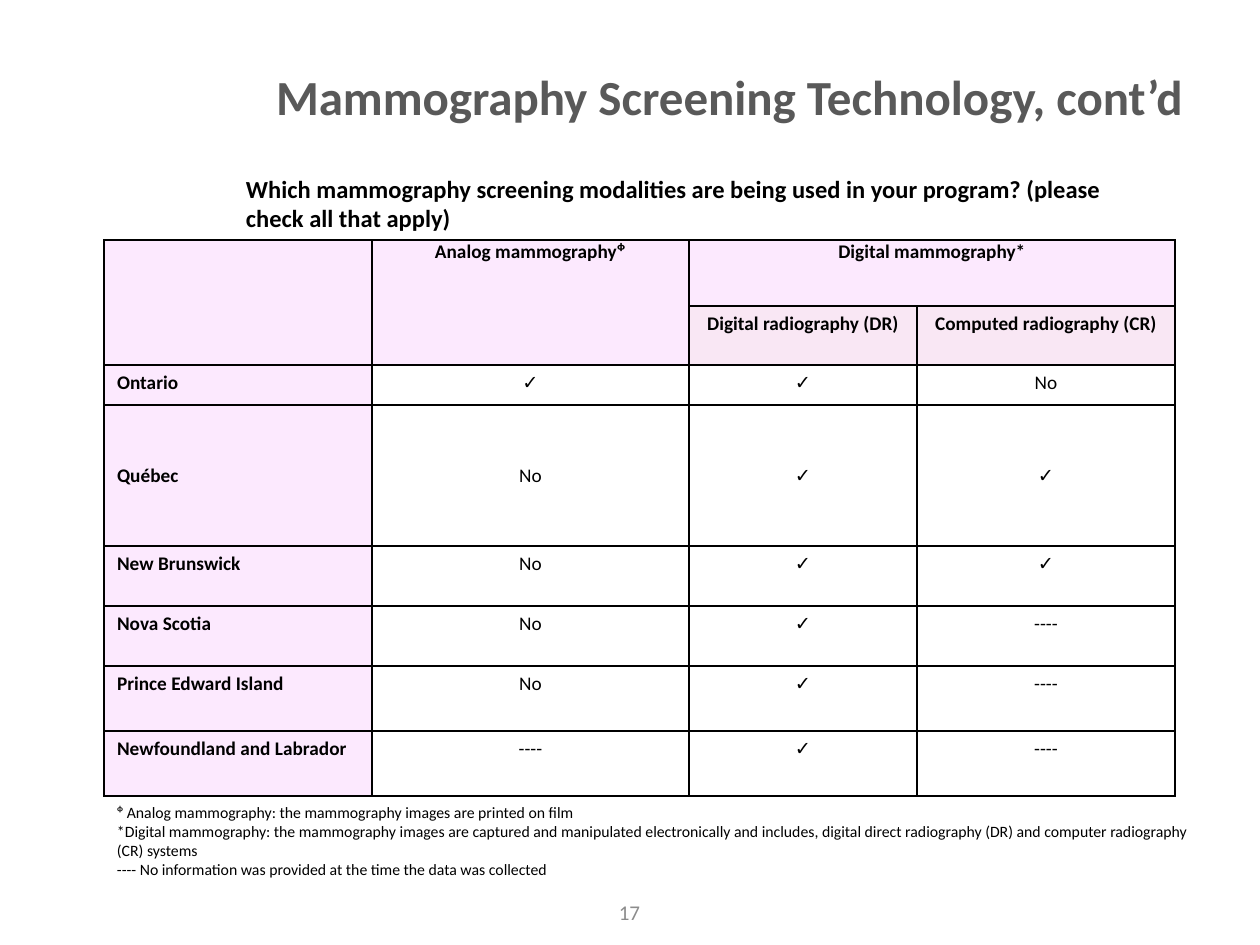
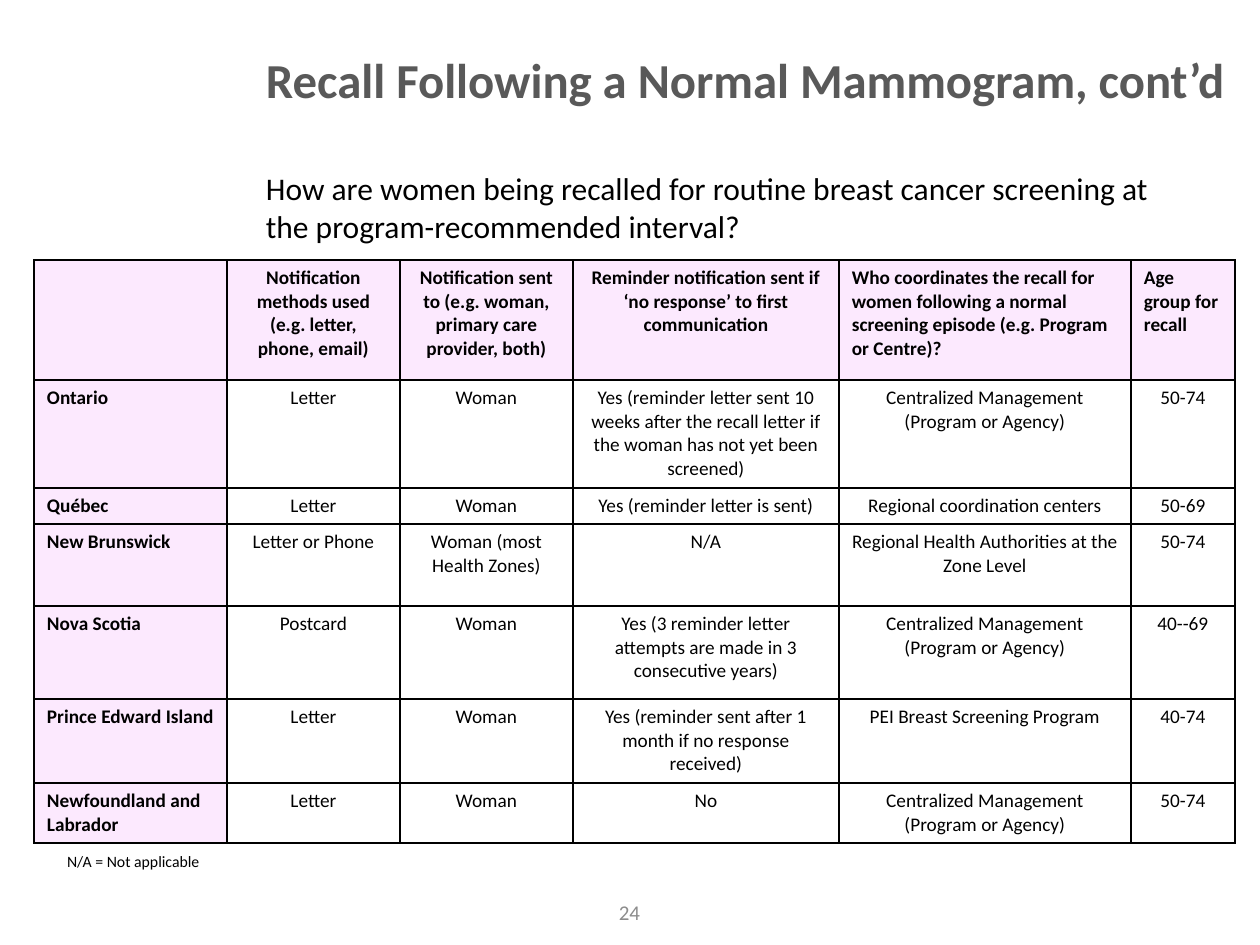
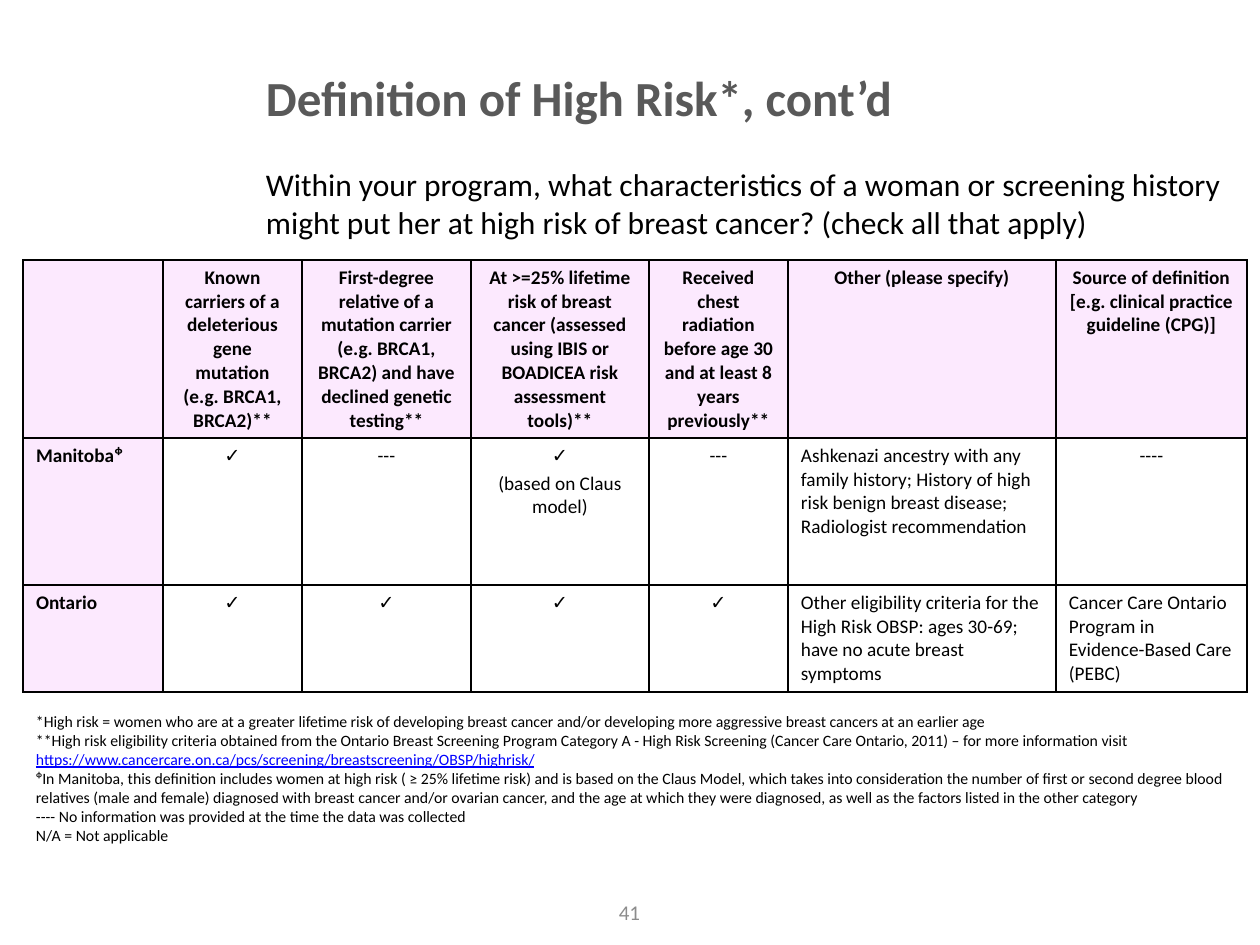
from lxml import etree
from pptx import Presentation
from pptx.dml.color import RGBColor
from pptx.enum.shapes import MSO_SHAPE
from pptx.enum.text import MSO_ANCHOR, PP_ALIGN
from pptx.oxml.ns import qn
from pptx.util import Emu, Pt

LEFT, CENTER = PP_ALIGN.LEFT, PP_ALIGN.CENTER
TOP, MIDDLE = MSO_ANCHOR.TOP, MSO_ANCHOR.MIDDLE
RECTANGLE = MSO_SHAPE.RECTANGLE

BLACK = RGBColor(0x00, 0x00, 0x00)
WHITE = RGBColor(0xFF, 0xFF, 0xFF)
TITLE_GREY = RGBColor(0x59, 0x59, 0x59)
NUMBER_GREY = RGBColor(0x8C, 0x8C, 0x8C)
LABEL_PINK = RGBColor(0xFC, 0xE9, 0xFE)
SUBHEADER_PINK = RGBColor(0xF9, 0xE7, 0xF4)
LINK_BLUE = RGBColor(0x00, 0x00, 0xFF)

FONT = "Calibri"
EMU_PER_PX = 914400 / 126
SLIDE_WIDTH, SLIDE_HEIGHT = 1260, 945
INSET_X, INSET_Y = 13, 6
TABLE_SIZE = 11
BORDER_SIDES = ("a:lnL", "a:lnR", "a:lnT", "a:lnB")
CHECK = "✓"
NO_INFORMATION = "---- No information was provided at the time the data was collected"
NOT_APPLICABLE = "N/A = Not applicable"


def px(length):
    return Emu(round(length * EMU_PER_PX))


def write(frame, text, size=TABLE_SIZE, color=BLACK, bold=False, align=LEFT, space_before=0):
    """Fill a frame with one paragraph per line; a line is a string or a list of (text, is_link)."""
    lines = text.split("\n") if isinstance(text, str) else text
    for index, line in enumerate(lines):
        paragraph = frame.paragraphs[0] if index == 0 else frame.add_paragraph()
        paragraph.alignment = align
        if index and space_before:
            paragraph.space_before = Pt(space_before)
        pieces = [(line, False)] if isinstance(line, str) else line
        for piece, is_link in pieces:
            run = paragraph.add_run()
            run.text = piece
            run.font.name = FONT
            run.font.size = Pt(size)
            run.font.bold = bold
            run.font.underline = is_link
            run.font.color.rgb = LINK_BLUE if is_link else color


def set_up_frame(frame, anchor=TOP, bottom_inset=INSET_Y):
    frame.word_wrap = True
    frame.vertical_anchor = anchor
    frame.margin_left = frame.margin_right = px(INSET_X)
    frame.margin_top, frame.margin_bottom = px(INSET_Y), px(bottom_inset)


def add_text(slide, box, text, anchor=TOP, bottom_inset=INSET_Y, **text_format):
    shape = slide.shapes.add_textbox(*map(px, box))
    set_up_frame(shape.text_frame, anchor, bottom_inset)
    write(shape.text_frame, text, **text_format)


def add_title(slide, box, text, size=28, bottom_inset=INSET_Y):
    add_text(slide, box, text, anchor=MIDDLE, bottom_inset=bottom_inset,
             size=size, color=TITLE_GREY, bold=True)


def add_page_number(slide, number):
    width, height = 87, 54
    box = ((SLIDE_WIDTH - width) // 2, 885, width, height)
    add_text(slide, box, str(number), anchor=MIDDLE, size=12, color=NUMBER_GREY, align=CENTER)


def add_filled_notes(slide, box, text):
    shape = slide.shapes.add_shape(RECTANGLE, *map(px, box))
    shape.shadow.inherit = False
    shape.fill.solid()
    shape.fill.fore_color.rgb = WHITE
    shape.line.fill.background()
    set_up_frame(shape.text_frame)
    write(shape.text_frame, text, size=9)


def set_borders(cell, width=Pt(1)):
    properties = cell._tc.get_or_add_tcPr()
    for position, side in enumerate(BORDER_SIDES):
        line = etree.Element(qn(side), w=str(width))
        fill = etree.SubElement(line, qn("a:solidFill"))
        etree.SubElement(fill, qn("a:srgbClr"), val=str(BLACK))
        properties.insert(position, line)


def add_table(slide, origin, widths, heights, rows, header_rows=1, left_cells=(), middle_rows=()):
    """Draw a bordered table with pink header rows and a pink first column."""
    box = (*origin, sum(widths), sum(heights))
    table = slide.shapes.add_table(len(rows), len(widths), *map(px, box)).table
    table.first_row = table.horz_banding = False
    for column, width in zip(table.columns, widths):
        column.width = px(width)
    for row, height in zip(table.rows, heights):
        row.height = px(height)
    for r, texts in enumerate(rows):
        for c, text in enumerate(texts):
            cell = table.cell(r, c)
            is_label = r < header_rows or c == 0
            cell.fill.solid()
            cell.fill.fore_color.rgb = LABEL_PINK if is_label else WHITE
            set_borders(cell)
            cell.margin_left = cell.margin_right = px(INSET_X)
            cell.margin_top = cell.margin_bottom = px(INSET_Y)
            cell.vertical_anchor = MIDDLE if r in middle_rows else TOP
            if text:
                align = LEFT if c == 0 or (r, c) in left_cells else CENTER
                write(cell.text_frame, text, bold=is_label, align=align, space_before=2.2)
    return table


def build_technology_slide(slide):
    add_title(slide, (263, 26, 937, 139), "Mammography Screening Technology, cont’d")
    rows = [
        ("", "Analog mammographyᶲ", "Digital mammography*", ""),
        ("", "", "Digital radiography (DR)", "Computed radiography (CR)"),
        ("Ontario", CHECK, CHECK, "No"),
        ("Québec", "No", CHECK, CHECK),
        ("New Brunswick", "No", CHECK, CHECK),
        ("Nova Scotia", "No", CHECK, "----"),
        ("Prince Edward Island", "No", CHECK, "----"),
        ("Newfoundland and Labrador", "----", CHECK, "----"),
    ]
    table = add_table(slide, (104, 240), (268, 317, 228, 258),
                      (66, 59, 40, 141, 60, 60, 65, 65), rows,
                      header_rows=2, middle_rows=(3,))
    for first, last in (((0, 0), (1, 0)), ((0, 1), (1, 1)), ((0, 2), (0, 3))):
        table.cell(*first).merge(table.cell(*last))
    for column in (1, 2):
        cell = table.cell(0, column)
        cell.margin_left = cell.margin_right = px(9)
        cell.margin_top = cell.margin_bottom = 0
    for column in (2, 3):
        table.cell(1, column).fill.fore_color.rgb = SUBHEADER_PINK
    add_text(slide, (233, 168, 942, 72),
             "Which mammography screening modalities are being used in your program? "
             "(please check all that apply)", size=14, bold=True)
    add_text(slide, (104, 797, 1111, 90), [
        "ᶲ Analog mammography: the mammography images are printed on film",
        "*Digital mammography: the mammography images are captured and manipulated electronically "
        "and includes, digital direct radiography (DR) and computer radiography (CR) systems",
        NO_INFORMATION,
    ], size=9)


def build_recall_slide(slide):
    add_title(slide, (253, 26, 992, 159), "Recall Following a Normal Mammogram, cont’d",
              size=27.9, bottom_inset=59)
    centralized = "Centralized Management (Program or Agency)"
    rows = [
        ("", "Notification methods used (e.g. letter, phone, email)",
         "Notification sent to (e.g. woman, primary care provider, both)",
         "Reminder notification sent if ‘no response’ to first communication",
         "Who coordinates the recall for women following a normal screening episode "
         "(e.g. Program or Centre)?", "Age group for recall"),
        ("Ontario", "Letter", "Woman",
         "Yes (reminder letter sent 10 weeks after the recall letter if the woman "
         "has not yet been screened)", centralized, "50-74"),
        ("Québec", "Letter", "Woman", "Yes (reminder letter is sent)",
         "Regional coordination centers", "50-69"),
        ("New Brunswick", "Letter or Phone", "Woman (most Health Zones)", "N/A",
         "Regional Health Authorities at the Zone Level", "50-74"),
        ("Nova Scotia", "Postcard", "Woman",
         "Yes (3 reminder letter attempts are made in 3 consecutive years)",
         centralized, "40--69"),
        ("Prince Edward Island", "Letter", "Woman",
         "Yes (reminder sent after 1 month if no response received)",
         "PEI Breast Screening Program", "40-74"),
        ("Newfoundland and Labrador", "Letter", "Woman", "No", centralized, "50-74"),
    ]
    add_table(slide, (34, 260), (193, 173, 173, 266, 292, 104),
              (120, 108, 36, 82, 93, 84, 60), rows, left_cells={(0, 4), (0, 5)})
    add_text(slide, (253, 163, 932, 89),
             "How are women being recalled for routine breast cancer screening at the "
             "program-recommended interval?", size=18)
    add_text(slide, (54, 846, 953, 32), NOT_APPLICABLE, size=9)


def build_high_risk_slide(slide):
    rows = [
        ("", "Known carriers of a deleterious gene mutation (e.g. BRCA1, BRCA2)**",
         "First-degree relative of a mutation carrier (e.g. BRCA1, BRCA2) and have declined "
         "genetic testing**",
         "At >=25% lifetime risk of breast cancer (assessed using IBIS or BOADICEA risk "
         "assessment tools)**",
         "Received chest radiation before age 30 and at least 8 years previously**",
         "Other (please specify)",
         "Source of definition [e.g. clinical practice guideline (CPG)]"),
        ("Manitobaᶲ", CHECK, "---", CHECK + "\n(based on Claus model)", "---",
         "Ashkenazi ancestry with any family history; History of high risk benign breast "
         "disease; Radiologist recommendation", "----"),
        ("Ontario", CHECK, CHECK, CHECK, CHECK,
         "Other eligibility criteria for the High Risk OBSP: ages 30-69; have no acute "
         "breast symptoms",
         "Cancer Care Ontario Program in Evidence-Based Care (PEBC)"),
    ]
    add_table(slide, (23, 260), (140, 139, 169, 178, 139, 268, 191), (178, 147, 107), rows,
              left_cells={(1, 5), (2, 5), (2, 6)})
    add_title(slide, (253, 29, 975, 136), "Definition of High Risk*, cont’d")
    add_filled_notes(slide, (23, 706, 1225, 146), [
        "*High risk = women who are at a greater lifetime risk of developing breast cancer "
        "and/or developing more aggressive breast cancers at an earlier age",
        [("**High risk eligibility criteria obtained from the Ontario Breast Screening Program "
          "Category A - High Risk Screening (Cancer Care Ontario, 2011) – for more information "
          "visit ", False),
         ("https://www.cancercare.on.ca/pcs/screening/breastscreening/OBSP/highrisk/", True)],
        "ᶲIn Manitoba, this definition includes women at high risk ( ≥ 25% lifetime risk) and is "
        "based on the Claus Model, which takes into consideration the number of first or second "
        "degree blood relatives (male and female) diagnosed with breast cancer and/or ovarian "
        "cancer, and the age at which they were diagnosed, as well as the factors listed in the "
        "other category",
        NO_INFORMATION,
        NOT_APPLICABLE,
    ])
    add_text(slide, (253, 159, 1007, 89),
             "Within your program, what characteristics of a woman or screening history might "
             "put her at high risk of breast cancer? (check all that apply)", size=18)


def main():
    presentation = Presentation()
    presentation.slide_width, presentation.slide_height = px(SLIDE_WIDTH), px(SLIDE_HEIGHT)
    blank_layout = presentation.slide_layouts[6]
    pages = ((build_technology_slide, 17), (build_recall_slide, 24), (build_high_risk_slide, 41))
    for build, number in pages:
        slide = presentation.slides.add_slide(blank_layout)
        build(slide)
        add_page_number(slide, number)
    presentation.save("out.pptx")


if __name__ == "__main__":
    main()
